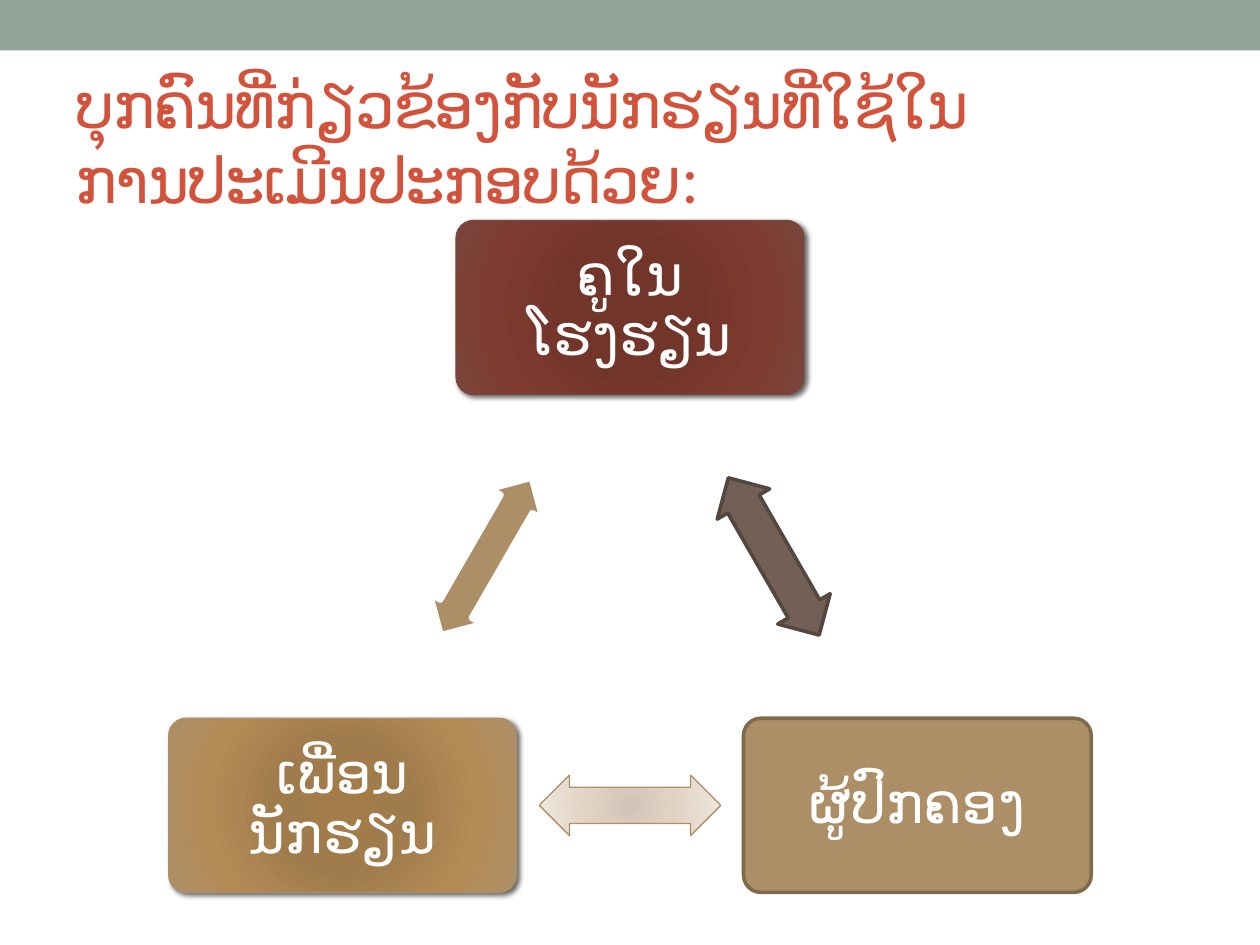
"""Build a slide showing a triangle of the people involved in assessing students."""
from math import cos, radians, sin

from lxml import etree
from pptx import Presentation
from pptx.dml.color import RGBColor
from pptx.enum.shapes import MSO_SHAPE
from pptx.enum.text import MSO_ANCHOR, PP_ALIGN
from pptx.oxml import parse_xml
from pptx.oxml.ns import nsdecls, qn
from pptx.util import Cm, Pt

RECTANGLE = MSO_SHAPE.RECTANGLE
ROUNDED = MSO_SHAPE.ROUNDED_RECTANGLE
ARROW = MSO_SHAPE.LEFT_RIGHT_ARROW
MIDDLE = MSO_ANCHOR.MIDDLE
CENTER = PP_ALIGN.CENTER
FONT = "Lato"
CENTER_X, CENTER_Y, RADIUS = 12.7, 12.89, 6.69
BOX_SIZE = (7.01, 3.51)
ARROW_SIZE = (3.66, 1.22)

TAN = "AD8F67"
RED_STOPS = [(0, "743327"), (34, "72352A"), (70, "7F3B2F"), (100, "79463D")]
GOLD_STOPS = [(0, "A37D49"), (34, "A07C4C"), (70, "B38B55"), (100, TAN)]
CREAM_STOPS = [(0, "D1C4B6"), (45, "E1D3C4"), (100, "EFE7DF")]

# text, box fill, box line, line width, shadow, then the arrow to the next box
PEOPLE = [
    ("ຄູໃນໂຮງຮຽນ", RED_STOPS, "79463D", 0.75, True, "726056", "544740", 2.08),
    ("ຜູ້ປົກຄອງ", TAN, "806A4C", 2.08, False, CREAM_STOPS, TAN, 0.75),
    ("ເພື່ອນນັກຮຽນ", GOLD_STOPS, TAN, 0.75, True, TAN, "FFFFFF", 3.5),
]


def add_figure(kind, center_x, center_y, size, fill, line, line_width):
    """Add a shape around a centre point, filled with a colour or radial stops."""
    width, height = size
    figure = slide.shapes.add_shape(
        kind, Cm(center_x - width / 2), Cm(center_y - height / 2), Cm(width), Cm(height))
    figure.shadow.inherit = False
    if isinstance(fill, str):
        figure.fill.solid()
        figure.fill.fore_color.rgb = RGBColor.from_string(fill)
    else:
        figure.fill.gradient()
        stops = "".join(
            f'<a:gs pos="{position * 1000}"><a:srgbClr val="{color}"/></a:gs>'
            for position, color in fill)
        gradient = parse_xml(
            f'<a:gradFill {nsdecls("a")} rotWithShape="1"><a:gsLst>{stops}</a:gsLst>'
            '<a:path path="circle"><a:fillToRect l="100000" t="100000" r="100000" b="100000"/>'
            '</a:path></a:gradFill>')
        properties = figure.element.spPr
        properties.replace(properties.find(qn("a:gradFill")), gradient)
    if line:
        figure.line.color.rgb = RGBColor.from_string(line)
        figure.line.width = Pt(line_width)
    else:
        figure.line.fill.background()
    return figure


def add_span(para, text, size, color):
    """Add a run of text in the slide's font."""
    span = para.add_run()
    span.text = text
    span.font.name = FONT
    span.font.size = Pt(size)
    span.font.color.rgb = RGBColor.from_string(color)
    etree.SubElement(span.font._element, qn("a:cs"), typeface=FONT)
    return span


deck = Presentation()
deck.slide_width, deck.slide_height = Cm(25.4), Cm(19.05)
slide = deck.slides.add_slide(deck.slide_layouts[6])

add_figure(RECTANGLE, CENTER_X, 0.51, (25.4, 1.02), "93A299", None, 0)

title = slide.shapes.add_textbox(Cm(1.27), Cm(1.47), Cm(22.86), Cm(2.74))
title.text_frame.word_wrap = True
title.text_frame.vertical_anchor = MIDDLE
heading = add_span(title.text_frame.paragraphs[0],
                   "ບຸກຄົນທີ່ກ່ຽວຂ້ອງກັັບນັກຮຽນທີ່ໃຊ້ໃນການປະເມີນປະກອບດ້ວຍ:", 36, "D2533C")
heading.font._element.set("spc", "-100")

for index, person in enumerate(PEOPLE):
    text, fill, line, width, shadowed, arrow_fill, arrow_line, arrow_width = person
    angle = radians(120 * index - 90)
    box = add_figure(ROUNDED, CENTER_X + RADIUS * cos(angle), CENTER_Y + RADIUS * sin(angle),
                     BOX_SIZE, fill, line, width)
    box.adjustments[0] = 0.1
    if shadowed:
        box.element.spPr.find(qn("a:effectLst")).append(parse_xml(
            f'<a:outerShdw {nsdecls("a")} blurRad="{Pt(3)}" dist="{Pt(2)}" dir="2700000"'
            ' rotWithShape="0"><a:srgbClr val="000000"><a:alpha val="60000"/></a:srgbClr>'
            '</a:outerShdw>'))
    frame = box.text_frame
    frame.word_wrap = True
    frame.vertical_anchor = MIDDLE
    frame.margin_left = frame.margin_right = frame.margin_top = frame.margin_bottom = Cm(0.33)
    para = frame.paragraphs[0]
    para.alignment = CENTER
    para.line_spacing = 0.9
    add_span(para, text, 32, "FFFFFF")

    middle = angle + radians(60)
    arrow = add_figure(ARROW, CENTER_X + RADIUS / 2 * cos(middle),
                       CENTER_Y + RADIUS / 2 * sin(middle),
                       ARROW_SIZE, arrow_fill, arrow_line, arrow_width)
    arrow.adjustments[0], arrow.adjustments[1] = 0.6, 0.5
    arrow.rotation = 60 + 120 * index

deck.save("out.pptx")
